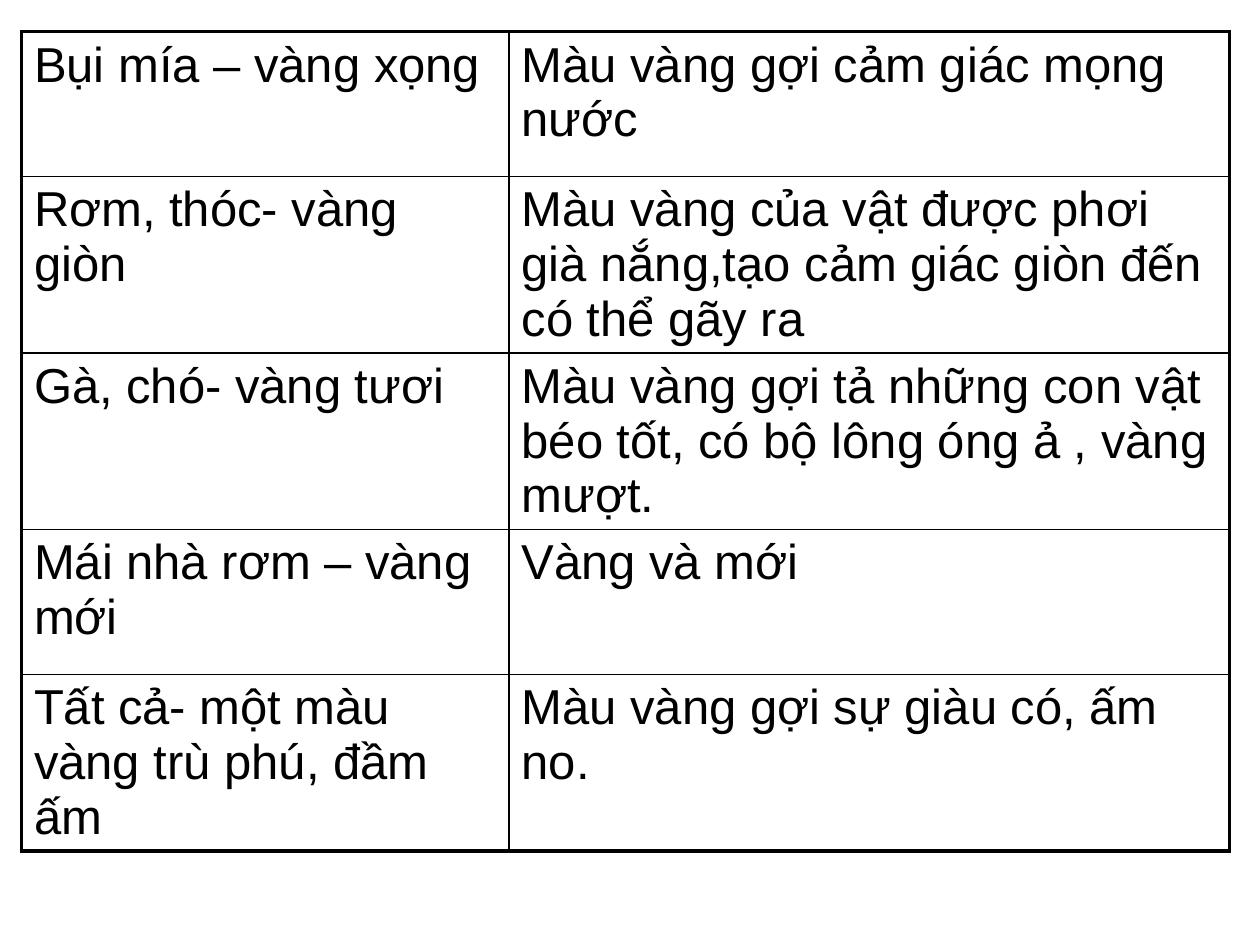
from dataclasses import dataclass

from lxml import etree
from pptx import Presentation
from pptx import util as u
from pptx.dml.color import RGBColor
from pptx.oxml import ns

COLORS = {"ink": "000000", "paper": "FFFFFF"}
THIN, THICK = 1, 2.25
ROWS = [
    ("Bụi mía – vàng xọng", "Màu vàng gợi cảm giác mọng nước"),
    ("Rơm, thóc- vàng giòn",
     "Màu vàng của vật được phơi già nắng,tạo cảm giác giòn đến có thể gãy ra"),
    ("Gà, chó- vàng tươi",
     "Màu vàng gợi tả những con vật béo tốt, có bộ lông óng ả , vàng mượt."),
    ("Mái nhà rơm – vàng mới", "Vàng và mới"),
    ("Tất cả- một màu vàng trù phú, đầm ấm", "Màu vàng gợi sự giàu có, ấm no."),
]


@dataclass
class SlideWriter:
    page: object
    font: str = "Arial"
    size: float = 28

    def table(self, left, top, widths, row_height, rows):
        frame = self.page.shapes.add_table(
            len(rows), len(widths), u.Inches(left), u.Inches(top),
            u.Inches(sum(widths)), u.Inches(row_height * len(rows)))
        table = frame.table
        table.first_row = table.horz_banding = False
        for column, width in zip(table.columns, widths):
            column.width = u.Inches(width)
        last_row, last_column = len(rows) - 1, len(widths) - 1
        for r, words in enumerate(rows):
            table.rows[r].height = u.Inches(row_height)
            for c, word in enumerate(words):
                cell = table.cell(r, c)
                self.cell_text(cell, word)
                outer = {"lnL": c == 0, "lnR": c == last_column,
                         "lnT": r == 0, "lnB": r == last_row}
                self.cell_borders(cell, outer)
                cell.fill.solid()
                cell.fill.fore_color.rgb = RGBColor.from_string(COLORS["paper"])

    def cell_text(self, cell, words):
        para = cell.text_frame.paragraphs[0]
        before = etree.SubElement(para._p.get_or_add_pPr(), ns.qn("a:spcBef"))
        etree.SubElement(before, ns.qn("a:spcPct"), val="20000")
        span = para.add_run()
        span.text = words
        span.font.name = self.font
        span.font.size = u.Pt(self.size)
        span.font.color.rgb = RGBColor.from_string(COLORS["ink"])

    def cell_borders(self, cell, outer):
        """Draw thick lines on the outer sides and thin ones elsewhere."""
        properties = cell._tc.get_or_add_tcPr()
        for side, is_outer in outer.items():
            width = u.Pt(THICK if is_outer else THIN)
            line = etree.SubElement(properties, ns.qn(f"a:{side}"), w=str(width))
            fill = etree.SubElement(line, ns.qn("a:solidFill"))
            etree.SubElement(fill, ns.qn("a:srgbClr"), val=COLORS["ink"])


def main():
    deck = Presentation()
    deck.slide_width, deck.slide_height = u.Inches(10), u.Inches(7.5)
    writer = SlideWriter(deck.slides.add_slide(deck.slide_layouts[6]))
    writer.table(0.17, 0.25, [3.87, 5.72], 1.15, ROWS)
    deck.save("out.pptx")


if __name__ == "__main__":
    main()
